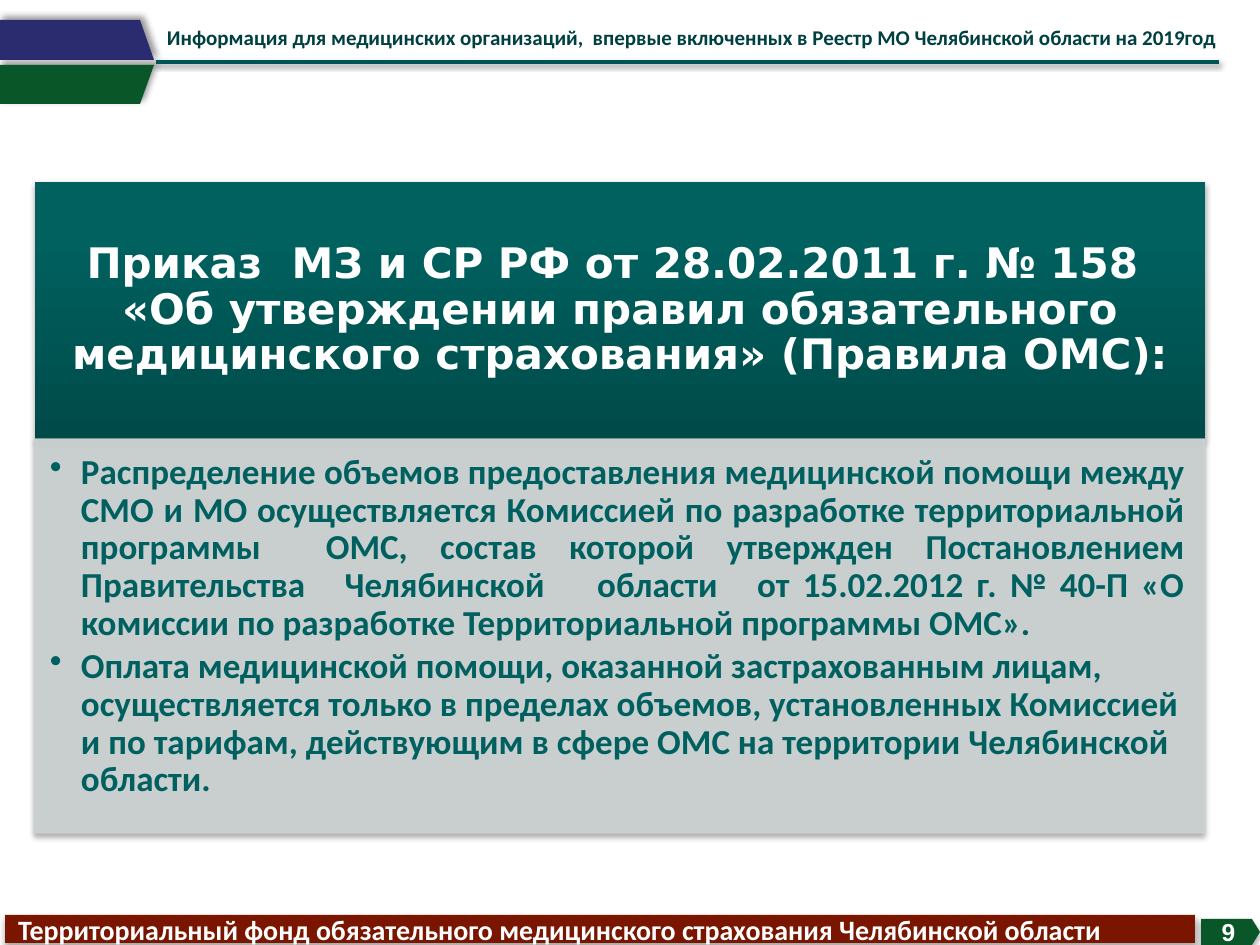
from lxml import etree
from pptx import Presentation
from pptx.dml.color import RGBColor
from pptx.enum.shapes import MSO_CONNECTOR, MSO_SHAPE
from pptx.enum.text import MSO_ANCHOR, PP_ALIGN
from pptx.oxml import parse_xml
from pptx.oxml.ns import nsdecls, qn
from pptx.util import Emu, Pt

PX = 914400 / 126
WHITE = RGBColor(0xFF, 0xFF, 0xFF)
GREEN = RGBColor(0x09, 0x57, 0x29)
NAVY = RGBColor(0x2B, 0x2C, 0x6F)
RED = RGBColor(0x7A, 0x16, 0x00)
RULE = RGBColor(0x00, 0x53, 0x53)
HEADER_TEXT = RGBColor(0x00, 0x40, 0x40)
BODY_TEXT = RGBColor(0x00, 0x60, 0x60)
TEAL_DARK = RGBColor(0x00, 0x4B, 0x49)
TEAL = RGBColor(0x00, 0x61, 0x5F)
GREY = RGBColor(0xCC, 0xD3, 0xD3)

# Shadows: opacity %, blur pt, distance pt, direction in degrees
TAB_SHADOW = (40, 4, 3, 315)
LINE_SHADOW = (38, 3.1, 1.6, 90)
PANEL_SHADOW = (35, 3.1, 1.8, 90)
FOOTER_SHADOW = (32, 3.5, 2.2, 90)

HEADER = "Информация для медицинских организаций,  впервые включенных в Реестр МО Челябинской области на 2019год"
TITLE = ("Приказ  МЗ и СР РФ от 28.02.2011 г. № 158 \v«Об утверждении правил обязательного "
         "медицинского страхования» (Правила ОМС):")
ALLOCATION = ("Распределение объемов предоставления медицинской помощи между СМО и МО осуществляется "
              "Комиссией по разработке территориальной программы  ОМС, состав которой утвержден "
              "Постановлением Правительства   Челябинской    области   от 15.02.2012 г. № 40-П "
              "«О комиссии по разработке Территориальной программы ОМС».")
PAYMENT = ("Оплата медицинской помощи, оказанной застрахованным лицам, осуществляется только в пределах "
           "объемов, установленных Комиссией и по тарифам, действующим в сфере ОМС на территории "
           "Челябинской области.")
FOOTER = "Территориальный фонд обязательного медицинского страхования Челябинской области"


def px(n):
    return Emu(round(n * PX))


def set_all(target, values):
    for name, value in values.items():
        setattr(target, name, value)


class SlideBuilder:
    def __init__(self, prs):
        self.s = prs.slides.add_slide(prs.slide_layouts[6])

    def shadow(self, sp, opacity, blur, distance, angle):
        spPr = sp._element.spPr
        for old in spPr.findall(qn("a:effectLst")):
            spPr.remove(old)
        spPr.append(parse_xml(
            f'<a:effectLst {nsdecls("a")}><a:outerShdw blurRad="{Pt(blur)}" dist="{Pt(distance)}" '
            f'dir="{angle * 60000}" rotWithShape="0"><a:srgbClr val="000000">'
            f'<a:alpha val="{opacity * 1000}"/></a:srgbClr></a:outerShdw></a:effectLst>'))

    def paint(self, sp, color, shadow):
        sp.fill.solid()
        sp.fill.fore_color.rgb = color
        sp.line.fill.background()
        self.shadow(sp, *shadow)

    def outline(self, points, color, shadow):
        fb = self.s.shapes.build_freeform(*points[0], scale=PX)
        fb.add_line_segments(points[1:], close=True)
        self.paint(fb.convert_to_shape(), color, shadow)

    def box(self, kind, at, color, shadow):
        sp = self.s.shapes.add_shape(kind, *map(px, at))
        self.paint(sp, color, shadow)
        return sp

    def rule(self, x1, x2, y, color, width, shadow):
        line = self.s.shapes.add_connector(MSO_CONNECTOR.STRAIGHT, px(x1), px(y), px(x2), px(y))
        set_all(line.line, {"width": Pt(width)})
        line.line.color.rgb = color
        self.shadow(line, *shadow)

    def text_box(self, at):
        return self.s.shapes.add_textbox(*map(px, at))

    def text(self, sp, paragraphs, size, color, font="Calibri", anchor=MSO_ANCHOR.TOP,
             insets=(13, 6, 13, 6), bullet=False, **spacing):
        """Fill sp with (text, alignment) paragraphs."""
        tf = sp.text_frame
        sides = ("margin_left", "margin_top", "margin_right", "margin_bottom")
        set_all(tf, {"word_wrap": True, "vertical_anchor": anchor, **dict(zip(sides, map(px, insets)))})
        for i, (words, align) in enumerate(paragraphs):
            p = tf.add_paragraph() if i else tf.paragraphs[0]
            p.text = words
            set_all(p, {"alignment": align, **spacing})
            for r in p.runs:
                set_all(r.font, {"name": font, "size": Pt(size), "bold": True})
                r.font.color.rgb = color
            if bullet:
                pPr = p._p.get_or_add_pPr()
                pPr.set("marL", str(px(31)))
                pPr.set("indent", str(-px(31)))
                etree.SubElement(pPr, qn("a:buChar")).set("char", "•")


def set_opacity(fill, percent):
    for clr in fill.iter(qn("a:srgbClr")):
        etree.SubElement(clr, qn("a:alpha")).set("val", str(percent * 1000))


def main():
    prs = Presentation()
    prs.slide_width, prs.slide_height = px(1260), px(945)
    b = SlideBuilder(prs)
    left, center = PP_ALIGN.LEFT, PP_ALIGN.CENTER
    middle = MSO_ANCHOR.MIDDLE

    # Header
    b.outline([(154, 65), (140, 104), (-1, 104), (-1, 65)], GREEN, TAB_SHADOW)
    b.outline([(154, 60), (140, 20), (-1, 20), (-1, 60)], NAVY, TAB_SHADOW)
    b.rule(156, 1219, 62, RULE, 2, LINE_SHADOW)
    b.text(b.text_box((154, 19, 1106, 77)), [(HEADER, left)], 12, HEADER_TEXT)

    # Title panel
    title_at = (35, 182, 1170, 257)
    panel = b.box(MSO_SHAPE.RECTANGLE, title_at, TEAL, PANEL_SHADOW)
    panel.fill.gradient()
    panel.fill.gradient_angle = 90
    for stop, position, color in zip(panel.fill.gradient_stops, (0, 0.8), (TEAL_DARK, TEAL)):
        stop.position = position
        stop.color.rgb = color
    b.text(b.text_box(title_at), [(TITLE, center)], 24, WHITE, "DejaVu Sans", middle,
           (24, 14, 24, 14), line_spacing=0.9)

    # Body panel
    body_at = (35, 439, 1170, 394)
    panel = b.box(MSO_SHAPE.RECTANGLE, body_at, GREY, PANEL_SHADOW)
    panel.line.color.rgb = GREY
    panel.line.width = Pt(0.75)
    set_opacity(panel._element.spPr.find(qn("a:solidFill")), 90)
    set_opacity(panel._element.spPr.find(qn("a:ln")), 90)
    b.text(b.text_box(body_at), [(ALLOCATION, PP_ALIGN.JUSTIFY), (PAYMENT, left)], 20, BODY_TEXT,
           insets=(15, 15, 20, 21), bullet=True, line_spacing=0.9, space_after=Pt(3))

    # Footer
    bar = b.box(MSO_SHAPE.RECTANGLE, (5, 915, 1190, 28), RED, FOOTER_SHADOW)
    b.text(bar, [(FOOTER, left)], 16, WHITE, anchor=middle)
    page = b.box(MSO_SHAPE.PENTAGON, (1201, 919, 59, 26), GREEN, FOOTER_SHADOW)
    page.adjustments[0] = 0.31
    b.text(page, [("9", center)], 14, WHITE, "Arial", middle)

    prs.save("out.pptx")


if __name__ == "__main__":
    main()
